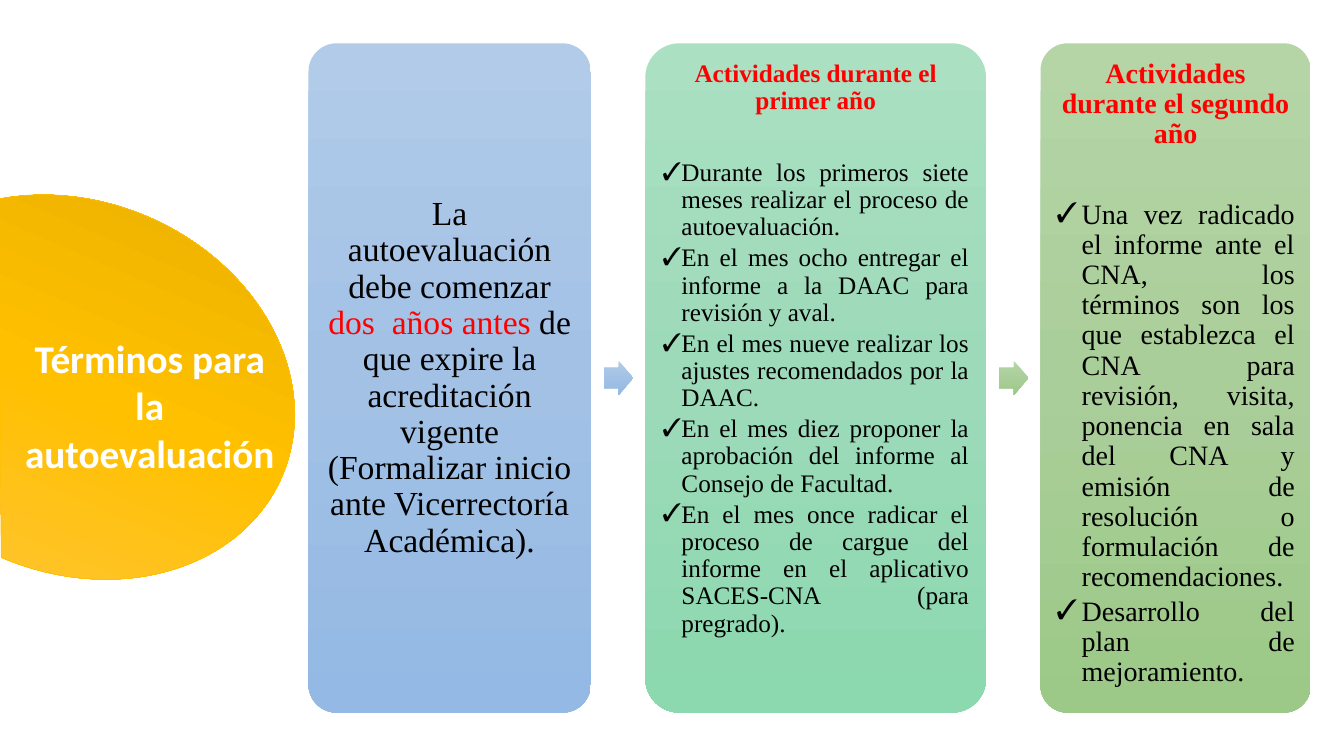
import pptx
import pptx.util
import pptx.oxml
import pptx.dml.color
import pptx.enum.shapes
import pptx.enum.text
from dataclasses import dataclass

Inches, Pt = pptx.util.Inches, pptx.util.Pt
RGB = pptx.dml.color.RGBColor.from_string
MSO = pptx.enum.shapes.MSO_SHAPE
ALIGN = pptx.enum.text.PP_ALIGN
ANCHOR = pptx.enum.text.MSO_ANCHOR


@dataclass(frozen=True)
class Theme:
    """Colours, fonts and type sizes of the slide."""
    gold = ("FFC64B", "FFC000", "E3AB00")
    blue = ("B1CBE9", "A3C1E5", "93B9E4")
    mint = ("ABE0C3", "9DDAB9", "8CD8AF")
    green = ("B5D5A7", "AACE9A", "9CC987")
    edge = "FFC000"
    ink = "000000"
    accent = "FF0000"
    white = "FFFFFF"
    title_font = "Calibri"
    body_font = "Times New Roman"
    title_size = 28


T = Theme()
TITLE = "Términos para la autoevaluación"
CARDS = [
    dict(width=2.8, inset=0.1, size=24, fill=T.blue, arrow=None, anchor=ANCHOR.MIDDLE,
         lead=[("La autoevaluación debe comenzar ", T.ink, False),
               ("dos  años antes ", T.accent, False),
               ("de que expire la acreditación vigente (Formalizar inicio ante "
                "Vicerrectoría Académica).", T.ink, False)],
         hang=0, items=[]),
    dict(width=3.38, inset=0.07, size=18, fill=T.mint, arrow=T.blue, anchor=ANCHOR.TOP,
         lead=[("Actividades durante el primer año", T.accent, True)],
         hang=0.19, items=[
             "Durante los primeros siete meses realizar el proceso de autoevaluación.",
             "En el mes ocho entregar el informe a la DAAC para revisión y aval.",
             "En el mes nueve realizar los ajustes recomendados por la DAAC.",
             "En el mes diez proponer la aprobación del informe al Consejo de Facultad.",
             "En el mes once radicar el proceso de cargue del informe en el aplicativo "
             "SACES-CNA  (para pregrado)."]),
    dict(width=2.68, inset=0.08, size=20, fill=T.green, arrow=T.green, anchor=ANCHOR.TOP,
         lead=[("Actividades durante el segundo año", T.accent, True)],
         hang=0.25, items=[
             "Una vez radicado el informe ante el CNA,  los términos son los que establezca "
             "el CNA para revisión, visita, ponencia en sala del CNA y emisión de resolución "
             "o formulación de recomendaciones.",
             "Desarrollo del plan de mejoramiento."]),
]
CARD_LEFT, CARD_TOP, CARD_HEIGHT, CARD_GAP = 3.06, 0.43, 6.64, 0.54
ARROW_W, ARROW_H, ARROW_OFFSET = 0.29, 0.34, 0.13
NS = 'xmlns:a="http://schemas.openxmlformats.org/drawingml/2006/main"'


def add_gradient_shape(slide, kind, box, colors, adjustments):
    """Add a preset shape with a vertical three-stop gradient and no outline."""
    s = slide.shapes.add_shape(kind, *[Inches(v) for v in box])
    s.shadow.inherit = False
    s.line.fill.background()
    for i, value in enumerate(adjustments):
        s.adjustments[i] = value
    stops = "".join(f'<a:gs pos="{pos}"><a:srgbClr val="{color}"/></a:gs>'
                    for pos, color in zip((0, 50000, 100000), colors))
    s._element.spPr.prstGeom.addnext(pptx.oxml.parse_xml(
        f'<a:gradFill {NS} rotWithShape="1"><a:gsLst>{stops}</a:gsLst>'
        '<a:lin ang="5400000" scaled="0"/></a:gradFill>'))
    return s


def add_run(p, text, font, size, color, bold):
    """Append one formatted run."""
    r = p.add_run()
    r.text = text
    r.font.name, r.font.size, r.font.bold = font, Pt(size), bold
    r.font.color.rgb = RGB(color)


def format_paragraph(p, align, spacing, after):
    """Set the alignment and spacing of a paragraph."""
    p.alignment, p.line_spacing = align, spacing
    p.space_before, p.space_after = Pt(0), Pt(after)


def set_insets(tf, x, y):
    """Set horizontal and vertical text margins."""
    tf.margin_left = tf.margin_right = Inches(x)
    tf.margin_top = tf.margin_bottom = Inches(y)


def fill_card(s, card):
    """Write the lead paragraph and the checked items of a card."""
    tf, size = s.text_frame, card["size"]
    tf.word_wrap = True
    tf.vertical_anchor = card["anchor"]
    set_insets(tf, card["inset"], card["inset"])
    p = tf.paragraphs[0]
    format_paragraph(p, ALIGN.CENTER, 0.9, 1.78 * size if card["items"] else 0)
    for text, color, bold in card["lead"]:
        add_run(p, text, T.body_font, size, color, bold)
    for item in card["items"]:
        p = tf.add_paragraph()
        pPr = p._p.get_or_add_pPr()
        pPr.set("marL", str(Inches(card["hang"])))
        pPr.set("indent", str(-Inches(card["hang"])))
        pPr.append(pptx.oxml.parse_xml(f'<a:buFont {NS} typeface="{T.body_font}"/>'))
        pPr.append(pptx.oxml.parse_xml(f'<a:buChar {NS} char="✓"/>'))
        format_paragraph(p, ALIGN.JUSTIFY, 0.9, 0.15 * size)
        add_run(p, item, T.body_font, size, T.ink, False)


def add_title(slide):
    """Place the title over the golden chord."""
    chord = add_gradient_shape(slide, MSO.CHORD, (-1.5, 2, 4.48, 3.68), T.gold, (26.92, 162))
    chord.rotation = 203.3
    chord.line.color.rgb = RGB(T.edge)
    chord.line.width = Pt(0.5)
    title = slide.shapes.title
    title.left, title.top, title.width, title.height = [
        Inches(v) for v in (0.13, 3.27, 2.71, 1.51)]
    chord._element.addnext(title._element)
    tf = title.text_frame
    tf.word_wrap = True
    tf.auto_size = pptx.enum.text.MSO_AUTO_SIZE.SHAPE_TO_FIT_TEXT
    tf.vertical_anchor = ANCHOR.TOP
    set_insets(tf, 0.1, 0.05)
    p = tf.paragraphs[0]
    format_paragraph(p, ALIGN.CENTER, 1.0, 0)
    add_run(p, TITLE, T.title_font, T.title_size, T.white, True)


def main():
    """Build and save the slide."""
    prs = pptx.Presentation()
    prs.slide_width, prs.slide_height = Inches(13.33), Inches(7.5)
    slide = prs.slides.add_slide(prs.slide_layouts[5])
    add_title(slide)
    left = CARD_LEFT
    for card in CARDS:
        if card["arrow"]:
            box = (left - CARD_GAP + ARROW_OFFSET,
                   CARD_TOP + (CARD_HEIGHT - ARROW_H) / 2, ARROW_W, ARROW_H)
            add_gradient_shape(slide, MSO.RIGHT_ARROW, box, card["arrow"], (0.6, 0.5))
        box = (left, CARD_TOP, card["width"], CARD_HEIGHT)
        fill_card(add_gradient_shape(slide, MSO.ROUNDED_RECTANGLE, box, card["fill"], (0.1,)), card)
        left += card["width"] + CARD_GAP
    prs.save("out.pptx")


if __name__ == "__main__":
    main()
